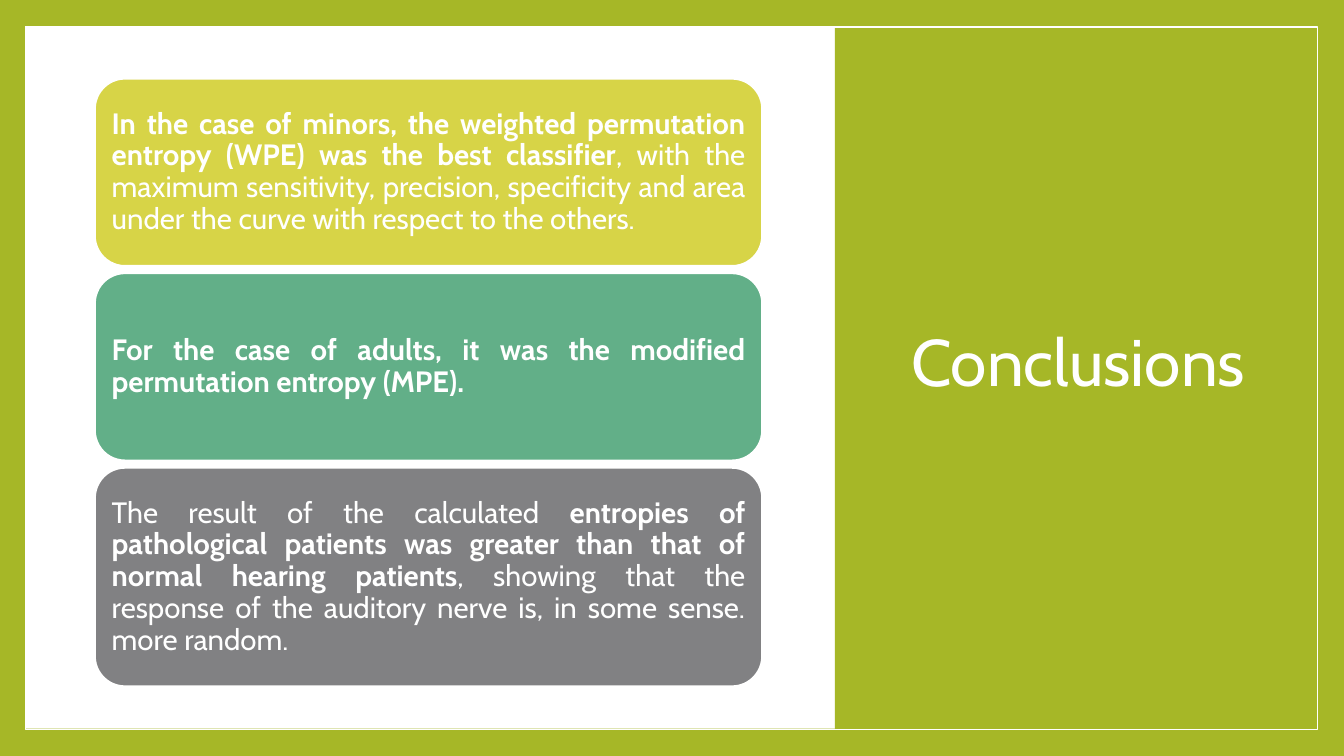
from pptx import Presentation
from pptx.dml.color import RGBColor
from pptx.enum.shapes import MSO_SHAPE as Kind
from pptx.enum.text import MSO_ANCHOR as Anchor, PP_ALIGN as Align
from pptx.util import Inches, Pt

WHITE, GREEN = "FFFFFF", "A6B727"


def paint(kind, box, fill=None, line=None, width=1):
    shape = slide.shapes.add_shape(kind, *map(Inches, box))
    shape.shadow.inherit = False
    if fill:
        shape.fill.solid()
        shape.fill.fore_color.rgb = RGBColor.from_string(fill)
    else:
        shape.fill.background()
    if line:
        shape.line.color.rgb = RGBColor.from_string(line)
        shape.line.width = Pt(width)
    else:
        shape.line.fill.background()
    return shape


def write(shape, runs, size, align, inset):
    """Fill the shape with one paragraph of (text, bold) runs."""
    frame = shape.text_frame
    frame.word_wrap = True
    frame.vertical_anchor = Anchor.MIDDLE
    frame.margin_left = frame.margin_right = Inches(inset)
    frame.margin_top = frame.margin_bottom = Inches(inset)
    para = frame.paragraphs[0]
    para.alignment = align
    para.line_spacing = 0.9
    for text, bold in runs:
        run = para.add_run()
        run.text = text
        run.font.name = "Cabin"
        run.font.size = Pt(size)
        run.font.bold = bold
        run.font.color.rgb = RGBColor.from_string(WHITE)


deck = Presentation()
deck.slide_width, deck.slide_height = Inches(13.33), Inches(7.5)
slide = deck.slides.add_slide(deck.slide_layouts[5])

# Backdrop, panels and frame
paint(Kind.RECTANGLE, (0, 0, 13.33, 7.5), GREEN)
paint(Kind.RECTANGLE, (0.25, 0.26, 12.82, 6.97), WHITE)
paint(Kind.RECTANGLE, (8.28, 0, 5.05, 7.5), GREEN)
paint(Kind.RECTANGLE, (0.25, 0.27, 12.82, 6.97), line=WHITE)

# Title, brought in front of the panels
title = slide.shapes.title
title.left, title.top = Inches(8.74), Inches(0.67)
title.width, title.height = Inches(3.91), Inches(5.91)
write(title, [("Conclusions", False)], 47, Align.CENTER, 0.05)
title.element.getparent().append(title.element)

# Stacked cards
cards = [
    ("D7D447", 1.86, [
        ("In the case of minors, the weighted permutation entropy (WPE) "
         "was the best classifier", True),
        (", with the maximum sensitivity, precision, specificity and area "
         "under the curve with respect to the others.", False)]),
    ("62AF88", 1.86, [
        ("For the case of adults, it was the modified permutation entropy "
         "(MPE).", True)]),
    ("818183", 2.17, [
        ("The result of the calculated ", False),
        ("entropies of pathological patients was greater than that of "
         "normal hearing patients", True),
        (", showing that the response of the auditory nerve is, in some "
         "sense. more random.", False)]),
]
top, gap, radius = 0.78, 0.07, 0.3
for fill, height, runs in cards:
    card = paint(Kind.ROUNDED_RECTANGLE, (0.94, top, 6.62, height),
                 fill, WHITE, 1.5)
    card.adjustments[0] = radius / height
    write(card, runs, 21, Align.JUSTIFY, 0.08)
    top += height + gap

deck.save("out.pptx")
